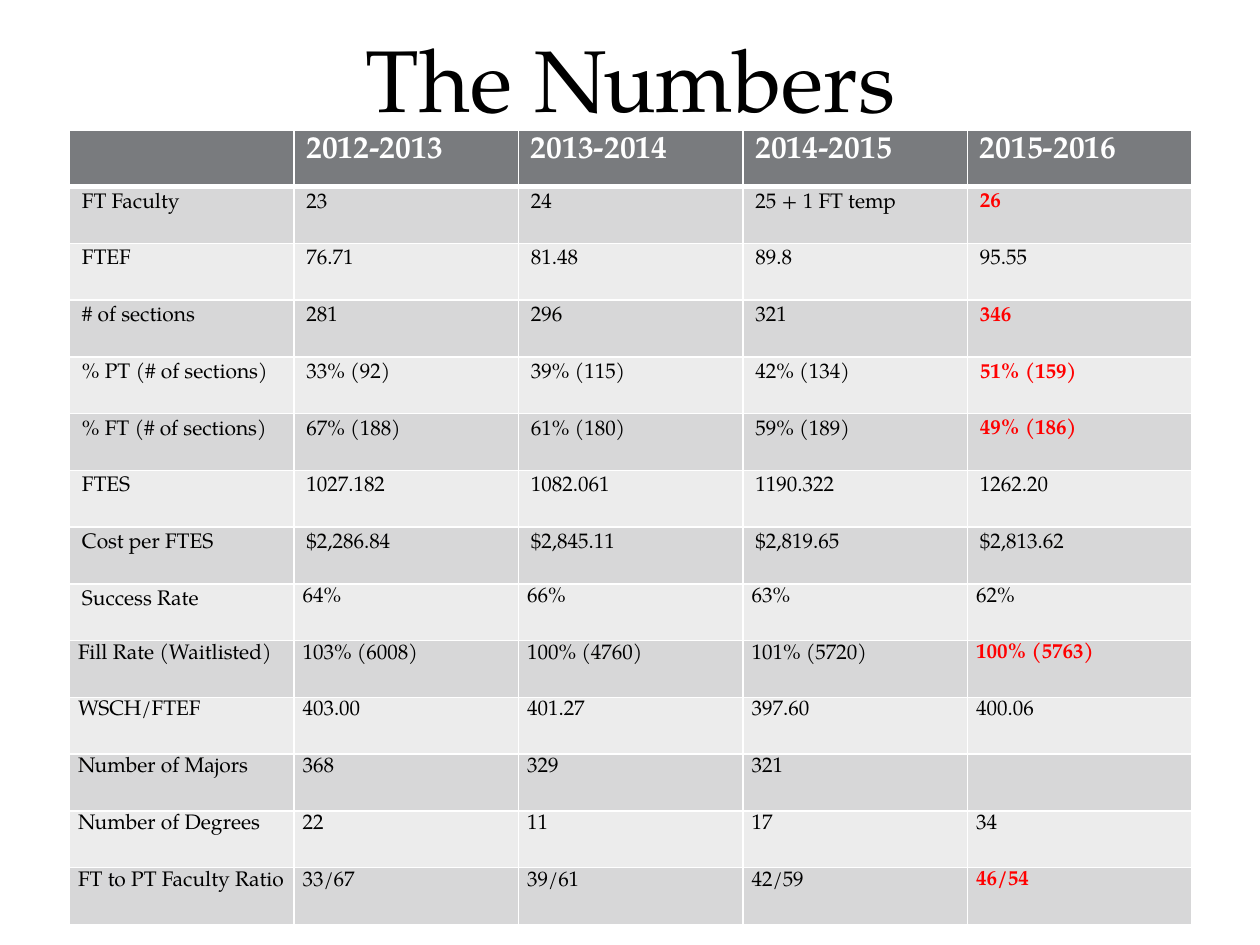
import pptx
import pptx.util
import pptx.dml.color
import pptx.enum.text
import pptx.oxml
import pptx.oxml.ns

Inches, Pt = pptx.util.Inches, pptx.util.Pt
RGB = pptx.dml.color.RGBColor.from_string
FONT = "TeX Gyre Pagella"
COLORS = {"text": "000000", "header": "797B7E", "odd": "D7D7D8",
          "even": "ECECEC", "accent": "FF0000", "white": "FFFFFF"}
LEFT, TOP, WIDTH, HEIGHT = 0.55, 1.03, 8.91, 6.31

ROWS = [
    ["", "2012-2013", "2013-2014", "2014-2015", "2015-2016"],
    ["FT Faculty", "23", "24", "25 + 1 FT temp", "26"],
    ["FTEF", "76.71", "81.48", "89.8", "95.55"],
    ["# of sections", "281", "296", "321", "346"],
    ["% PT (# of sections)", "33% (92)", "39% (115)", "42% (134)", "51% (159)"],
    ["% FT (# of sections)", "67% (188)", "61% (180)", "59% (189)", "49% (186)"],
    ["FTES", "1027.182", "1082.061", "1190.322", "1262.20"],
    ["Cost per FTES", "$2,286.84", "$2,845.11", "$2,819.65", "$2,813.62"],
    ["Success Rate", "64%", "66%", "63%", "62%"],
    ["Fill Rate (Waitlisted)", "103% (6008)", "100% (4760)", "101% (5720)", "100% (5763)"],
    ["WSCH/FTEF", "403.00", "401.27", "397.60", "400.06"],
    ["Number of Majors", "368", "329", "321", ""],
    ["Number of Degrees", "22", "11", "17", "34"],
    ["FT to PT Faculty Ratio", "33/67", "39/61", "42/59", "46/54"],
]
RED_ROWS = {1, 3, 4, 5, 9, 13}  # last column is highlighted
SUCCESS_ROW = 8  # from its first value on, cells have tighter insets


def style_runs(p, size, color, bold=False):
    for r in p.runs:
        r.font.name, r.font.size, r.font.bold = FONT, Pt(size), bold
        r.font.color.rgb = RGB(COLORS[color])


def set_borders(cell, top, bottom):
    """White cell borders; top and bottom widths in points."""
    widths = {"lnL": 1, "lnR": 1, "lnT": top, "lnB": bottom}
    for i, (tag, width) in enumerate(widths.items()):
        cell._tc.get_or_add_tcPr().insert(i, pptx.oxml.parse_xml(
            f'<a:{tag} {pptx.oxml.ns.nsdecls("a")} w="{Pt(width)}"><a:solidFill>'
            f'<a:srgbClr val="{COLORS["white"]}"/></a:solidFill></a:{tag}>'))


prs = pptx.Presentation()
prs.slide_width, prs.slide_height = Inches(10), Inches(7.5)
s = prs.slides.add_slide(prs.slide_layouts[6])

title = s.shapes.add_textbox(Inches(LEFT), Inches(0.1), Inches(WIDTH), Inches(TOP - 0.1))
tf = title.text_frame
tf.word_wrap = True
tf.vertical_anchor = pptx.enum.text.MSO_ANCHOR.BOTTOM
tf.margin_top = tf.margin_bottom = 0
tf.text = "The Numbers"
tf.paragraphs[0].alignment = pptx.enum.text.PP_ALIGN.CENTER
style_runs(tf.paragraphs[0], 50, "text")

table = s.shapes.add_table(len(ROWS), len(ROWS[0]), Inches(LEFT), Inches(TOP),
                           Inches(WIDTH), Inches(HEIGHT)).table
for row in table.rows:
    row.height = Inches(HEIGHT / len(ROWS))

for i, values in enumerate(ROWS):
    for j, value in enumerate(values):
        cell = table.cell(i, j)
        cell.text = value
        p = cell.text_frame.paragraphs[0]
        red = i in RED_ROWS and j == len(values) - 1
        if i == 0:
            fill = "header"
            style_runs(p, 18, "white", True)
        else:
            fill = "odd" if i % 2 else "even"
            style_runs(p, 12, "accent" if red else "text", red)
        if value and (i > SUCCESS_ROW or (i == SUCCESS_ROW and j > 0)):
            cell.margin_left = cell.margin_right = Inches(0.07)
            cell.margin_top = cell.margin_bottom = 0
            p.line_spacing = 1.15
        cell.fill.solid()
        cell.fill.fore_color.rgb = RGB(COLORS[fill])
        set_borders(cell, top=3 if i == 1 else 1, bottom=3 if i == 0 else 1)

prs.save("out.pptx")
